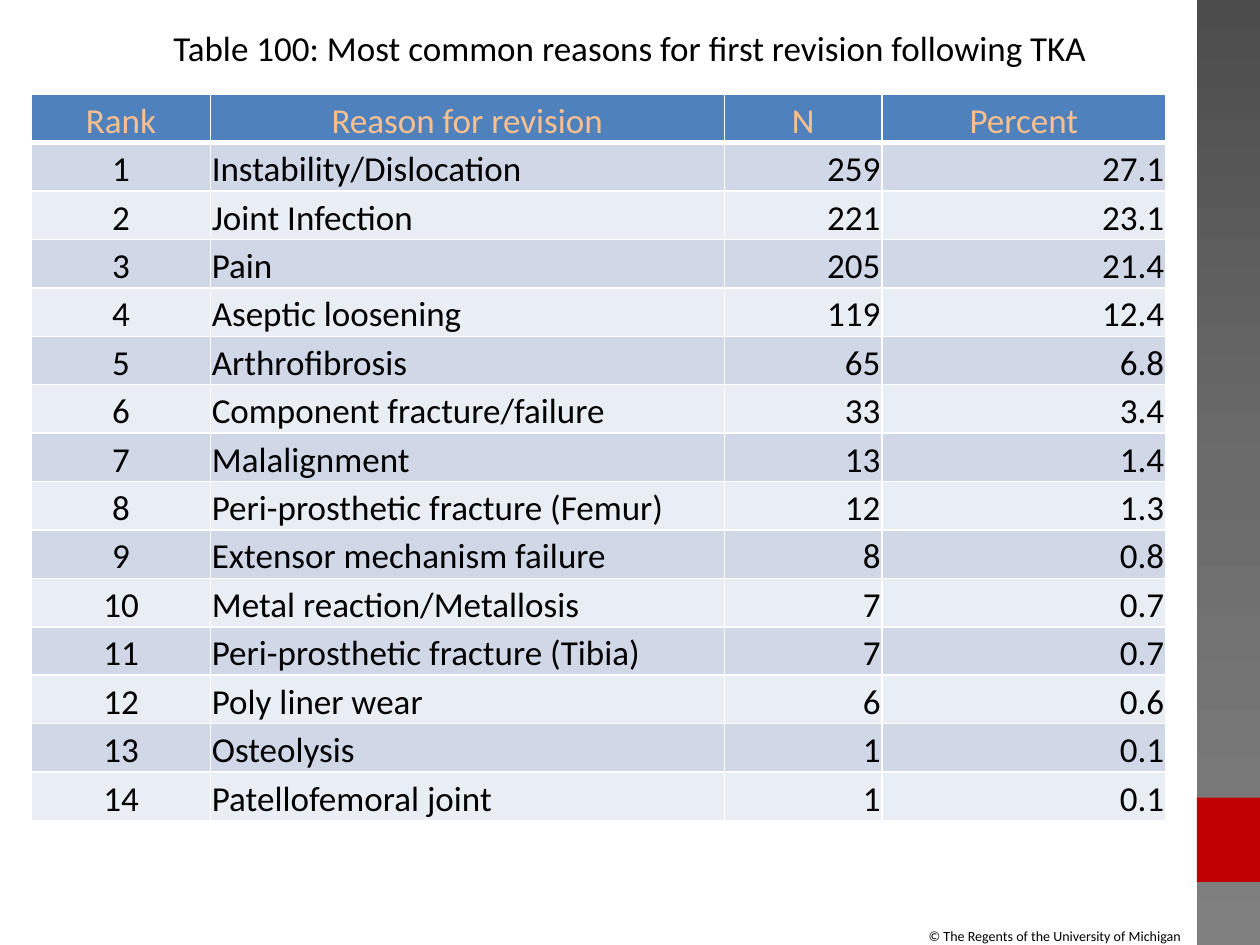
"""Build a slide with a ranked table of reasons for first revision following TKA."""
from copy import deepcopy
from dataclasses import dataclass

from lxml import etree
from pptx import Presentation
from pptx.dml.color import RGBColor
from pptx.enum.shapes import MSO_SHAPE
from pptx.enum.text import MSO_ANCHOR, MSO_AUTO_SIZE, PP_ALIGN
from pptx.oxml.ns import qn
from pptx.util import Cm, Pt

RECTANGLE = MSO_SHAPE.RECTANGLE
LEFT, CENTER, RIGHT = PP_ALIGN.LEFT, PP_ALIGN.CENTER, PP_ALIGN.RIGHT
MIDDLE, BOTTOM = MSO_ANCHOR.MIDDLE, MSO_ANCHOR.BOTTOM
FIT_SHAPE = MSO_AUTO_SIZE.SHAPE_TO_FIT_TEXT
FONT = "Calibri"
BLACK, WHITE = "000000", "FFFFFF"
HEADER_FILL, HEADER_TEXT = "4F81BD", "FAC090"
BAND_FILLS = ("D0D8E8", "E9EDF4")
SIDE_GRADIENT = ((0, "4C4C4C"), (0.5, "6B6B6B"), (1, "808080"))


@dataclass
class Column:
    heading: str
    width: float
    align: PP_ALIGN


@dataclass
class Reason:
    name: str
    count: int
    percent: float


COLUMNS = (
    Column("Rank", 3.6, CENTER),
    Column("Reason for revision", 10.36, LEFT),
    Column("N", 3.18, RIGHT),
    Column("Percent", 5.72, RIGHT),
)
REASONS = (
    Reason("Instability/Dislocation", 259, 27.1),
    Reason("Joint Infection", 221, 23.1),
    Reason("Pain", 205, 21.4),
    Reason("Aseptic loosening", 119, 12.4),
    Reason("Arthrofibrosis", 65, 6.8),
    Reason("Component fracture/failure", 33, 3.4),
    Reason("Malalignment", 13, 1.4),
    Reason("Peri-prosthetic fracture (Femur)", 12, 1.3),
    Reason("Extensor mechanism failure", 8, 0.8),
    Reason("Metal reaction/Metallosis", 7, 0.7),
    Reason("Peri-prosthetic fracture (Tibia)", 7, 0.7),
    Reason("Poly liner wear", 6, 0.6),
    Reason("Osteolysis", 1, 0.1),
    Reason("Patellofemoral joint", 1, 0.1),
)


def color(value: str) -> RGBColor:
    return RGBColor.from_string(value)


def write(frame, text: str, size: float, ink: str, align: PP_ALIGN) -> None:
    frame.text = text
    para = frame.paragraphs[0]
    para.alignment = align
    para.font.name = FONT
    para.font.size = Pt(size)
    para.font.bold = False
    para.font.color.rgb = color(ink)


def add_side_block(page, top: float, height: float):
    block = page.shapes.add_shape(RECTANGLE, Cm(24.13), Cm(top), Cm(1.27), Cm(height))
    block.shadow.inherit = False
    block.line.fill.background()
    return block


def fill_gradient(shape, stops) -> None:
    shape.fill.gradient()
    shape.fill.gradient_angle = 270
    stop_list = shape._element.spPr.find(".//" + qn("a:gsLst"))
    stop_list.append(deepcopy(stop_list[0]))
    for stop, (position, value) in zip(shape.fill.gradient_stops, stops):
        stop.position = position
        stop.color.rgb = color(value)


def set_borders(cell, top: float, bottom: float) -> None:
    widths = {"a:lnL": 1, "a:lnR": 1, "a:lnT": top, "a:lnB": bottom}
    properties = cell._tc.get_or_add_tcPr()
    for index, (tag, width) in enumerate(widths.items()):
        line = etree.Element(qn(tag), w=str(Pt(width)))
        solid = etree.SubElement(line, qn("a:solidFill"))
        etree.SubElement(solid, qn("a:srgbClr"), val=WHITE)
        properties.insert(index, line)


def style_cell(cell, text: str, fill: str, ink: str, align: PP_ALIGN) -> None:
    cell.margin_left = cell.margin_right = cell.margin_top = Cm(0.03)
    cell.margin_bottom = 0
    cell.vertical_anchor = BOTTOM
    cell.fill.solid()
    cell.fill.fore_color.rgb = color(fill)
    write(cell.text_frame, text, 20, ink, align)


def add_reason_table(page) -> None:
    row_count = len(REASONS) + 1
    width = sum(column.width for column in COLUMNS)
    table = page.shapes.add_table(
        row_count, len(COLUMNS), Cm(0.64), Cm(1.9), Cm(width), Cm(14.65)
    ).table
    table.horz_banding = False
    for index, column in enumerate(COLUMNS):
        table.columns[index].width = Cm(column.width)
        cell = table.cell(0, index)
        style_cell(cell, column.heading, HEADER_FILL, HEADER_TEXT, CENTER)
        set_borders(cell, 1, 3)
    for rank, reason in enumerate(REASONS, 1):
        values = (rank, reason.name, reason.count, reason.percent)
        fill = BAND_FILLS[(rank - 1) % 2]
        for index, (column, value) in enumerate(zip(COLUMNS, values)):
            cell = table.cell(rank, index)
            style_cell(cell, str(value), fill, BLACK, column.align)
            set_borders(cell, 3 if rank == 1 else 1, 1)


def add_title(page) -> None:
    title = page.shapes.title
    title.left, title.top, title.width, title.height = Cm(1.27), Cm(-0.64), Cm(22.86), Cm(3.18)
    title.text_frame.vertical_anchor = MIDDLE
    text = "Table 100: Most common reasons for first revision following TKA"
    write(title.text_frame, text, 20, BLACK, CENTER)


def add_copyright(page) -> None:
    box = page.shapes.add_textbox(Cm(18.47), Cm(18.57), Cm(5.66), Cm(0.6))
    box.text_frame.word_wrap = False
    box.text_frame.auto_size = FIT_SHAPE
    write(box.text_frame, "© The Regents of the University of Michigan", 8, BLACK, LEFT)


def main() -> None:
    deck = Presentation()
    deck.slide_width, deck.slide_height = Cm(25.4), Cm(19.05)
    page = deck.slides.add_slide(deck.slide_layouts[5])
    fill_gradient(add_side_block(page, 0, 19.05), SIDE_GRADIENT)
    accent = add_side_block(page, 16.08, 1.7)
    accent.fill.solid()
    accent.fill.fore_color.rgb = color("C00000")
    add_copyright(page)
    add_title(page)
    add_reason_table(page)
    deck.save("out.pptx")


if __name__ == "__main__":
    main()
